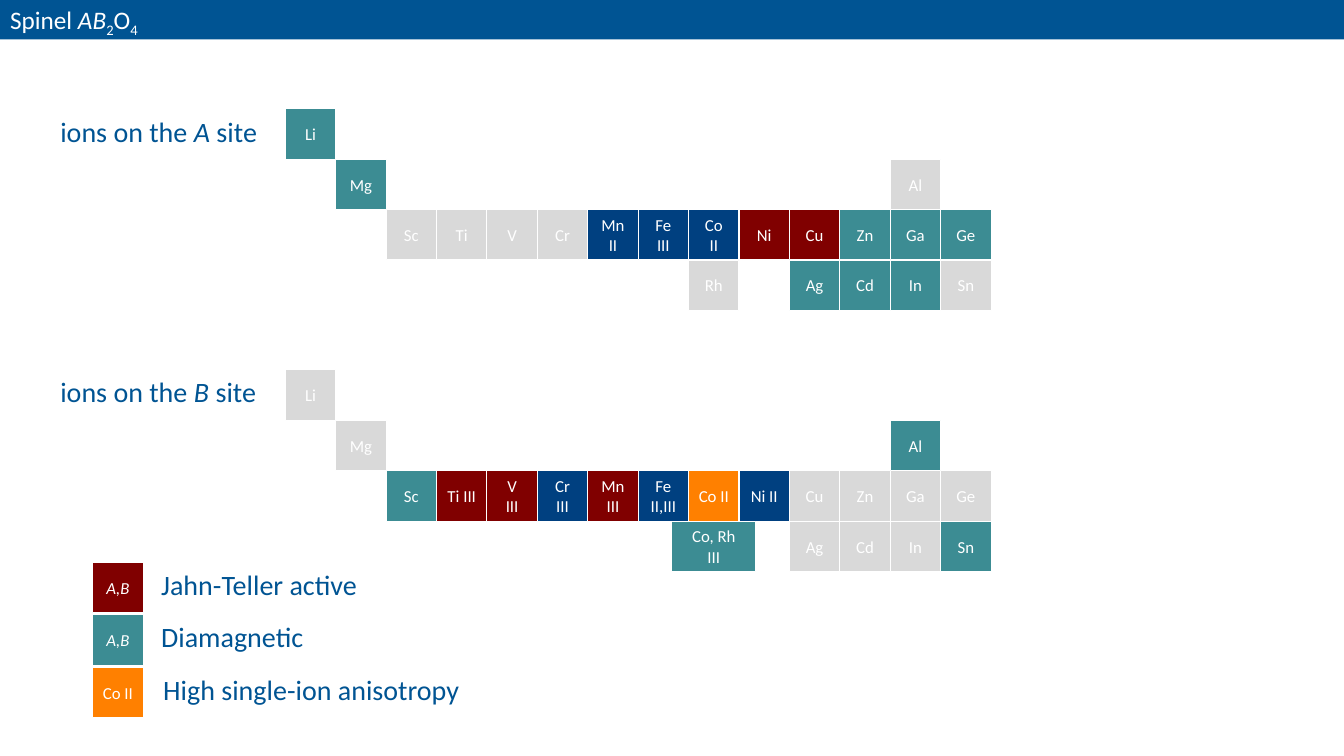
from dataclasses import dataclass

from pptx import Presentation
from pptx.dml.color import RGBColor
from pptx.enum import shapes, text
from pptx.util import Inches, Pt


@dataclass(frozen=True)
class Theme:
    font: str = "Calibri"
    head: int = 18
    label: int = 20
    ion: int = 12
    white: str = "FFFFFF"
    blue: str = "005493"
    navy: str = "004080"
    red: str = "800000"
    teal: str = "3C8C93"
    orange: str = "FF8000"
    gray: str = "D9D9D9"


def write(frame, words, size, color, font, align=text.PP_ALIGN.LEFT,
          anchor=text.MSO_ANCHOR.TOP):
    """Fill a frame with lines; each line is a list of (text, style) runs.

    A plain string is split at line ends. Style is "", "i" or "sub".
    """
    if isinstance(words, str):
        words = [[(line, "")] for line in words.split("\n")]
    frame.word_wrap = True
    frame.auto_size = text.MSO_AUTO_SIZE.NONE
    frame.vertical_anchor = anchor
    frame.margin_left = frame.margin_right = Inches(0.1)
    frame.margin_top = frame.margin_bottom = Inches(0.05)
    for n, line in enumerate(words):
        para = frame.add_paragraph() if n else frame.paragraphs[0]
        para.alignment = align
        for part, style in line:
            run = para.add_run()
            run.text = part
            run.font.name = font
            run.font.size = Pt(size)
            run.font.bold = False
            run.font.italic = style == "i"
            run.font.color.rgb = RGBColor.from_string(color)
            if style == "sub":
                run.font._element.set("baseline", "-25000")


class Deck:
    def __init__(self, theme):
        self.theme = theme
        self.prs = Presentation()
        self.prs.slide_width = Inches(13.33)
        self.prs.slide_height = Inches(7.5)
        self.slide = self.prs.slides.add_slide(self.prs.slide_layouts[5])

    def title(self, words):
        bar = self.slide.shapes.title
        bar.left, bar.top = Inches(0), Inches(-0.01)
        bar.width, bar.height = Inches(13.33), Inches(0.4)
        bar.fill.solid()
        bar.fill.fore_color.rgb = RGBColor.from_string(self.theme.blue)
        write(bar.text_frame, words, self.theme.head, self.theme.white,
              self.theme.font)

    def label(self, words, x, y, w):
        box = self.slide.shapes.add_textbox(
            Inches(x), Inches(y), Inches(w), Inches(0.44))
        write(box.text_frame, words, self.theme.label, self.theme.blue,
              self.theme.font)

    def tile(self, words, x, y, fill, w=0.5, group=None):
        home = (group or self.slide).shapes
        box = home.add_shape(shapes.MSO_SHAPE.RECTANGLE, Inches(x), Inches(y),
                             Inches(w), Inches(0.5))
        box.shadow.inherit = False
        box.fill.solid()
        box.fill.fore_color.rgb = RGBColor.from_string(fill)
        box.line.color.rgb = RGBColor.from_string(self.theme.white)
        box.line.width = Pt(0.75)
        write(box.text_frame, words, self.theme.ion, self.theme.white,
              self.theme.font, text.PP_ALIGN.CENTER, text.MSO_ANCHOR.MIDDLE)

    def chart(self, top, tones, names, wide=()):
        """Draw the ion map of one site; ions without a tone are gray."""
        group = self.slide.shapes.add_group_shape()
        for ion, (col, row) in CELLS.items():
            w = 0.83 if ion in wide else 0.5
            x = 2.83 + 0.5 * col - (w - 0.5) / 2
            fill = next((tone for tone, ions in tones.items()
                         if ion in ions.split()), self.theme.gray)
            self.tile(names.get(ion, ion), x, top + 0.5 * row, fill, w, group)


# Each run of neighbouring ions: row, first column, symbols
RUNS = [
    (2, 2, "Sc Ti V Cr Mn Fe Co Ni Cu Zn Ga Ge"),
    (3, 8, "Rh"),
    (3, 10, "Ag Cd In Sn"),
    (1, 1, "Mg"),
    (0, 0, "Li"),
    (1, 12, "Al"),
]
CELLS = {ion: (col, row) for row, start, ions in RUNS
         for col, ion in enumerate(ions.split(), start)}


def main():
    look = Theme()
    deck = Deck(look)
    deck.title([[("Spinel ", ""), ("AB", "i"), ("2", "sub"), ("O", ""),
                 ("4", "sub")]])

    deck.chart(1.08,
               {look.navy: "Mn Fe Co", look.red: "Ni Cu",
                look.teal: "Li Mg Zn Ga Ge Ag Cd In"},
               {"Mn": "Mn II", "Fe": "Fe III", "Co": "Co\nII"})
    deck.chart(3.67,
               {look.navy: "Cr Fe Ni", look.red: "Ti V Mn",
                look.teal: "Sc Al Rh Sn", look.orange: "Co"},
               {"Ti": "Ti III", "V": "V\nIII", "Cr": "Cr III", "Mn": "Mn III",
                "Fe": "Fe II,III", "Co": "Co II", "Ni": "Ni II",
                "Rh": "Co, Rh\nIII"},
               wide=("Rh",))
    for site, top in (("A", 1.09), ("B", 3.67)):
        deck.label([[("ions on the ", ""), (site, "i"), (" site", "")]],
                   0.5, top, 2.4)

    both = [[("A,B", "i")]]
    keys = [
        (both, look.red, "Jahn-Teller active", 1.5, 2.39),
        (both, look.teal, "Diamagnetic", 1.5, 1.8),
        ("Co II", look.orange, "High single-ion anisotropy", 1.52, 3.52),
    ]
    for n, (mark, fill, words, x, w) in enumerate(keys):
        top = 5.58 + 0.52 * n
        deck.tile(mark, 0.92, top, fill)
        deck.label(words, x, top, w)

    deck.prs.save("out.pptx")


if __name__ == "__main__":
    main()
